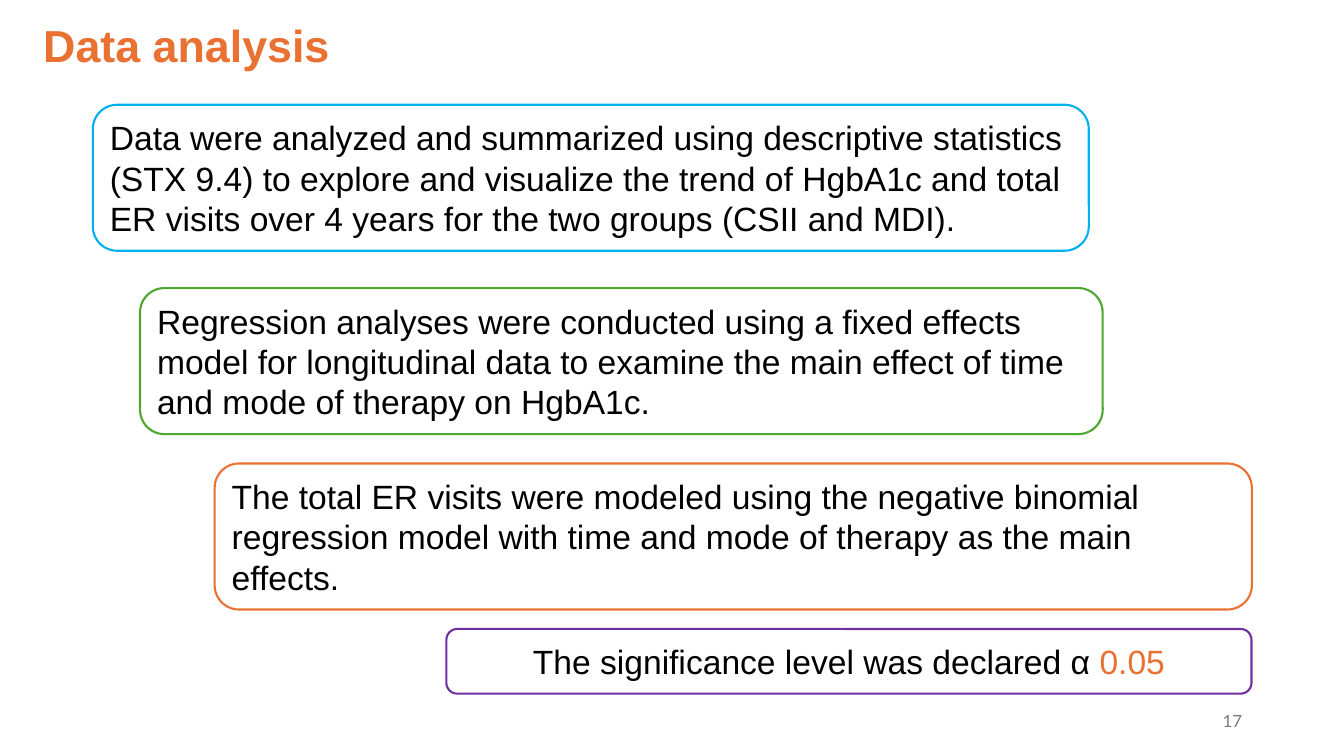
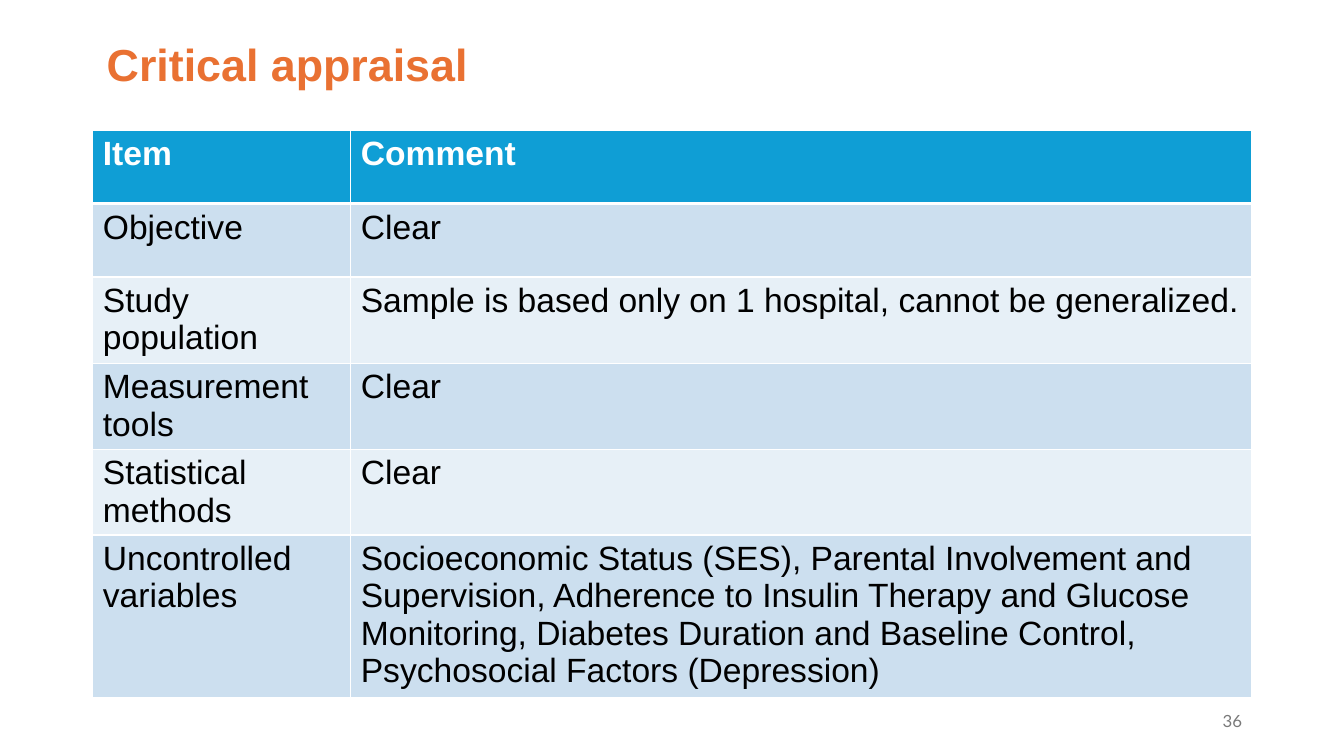
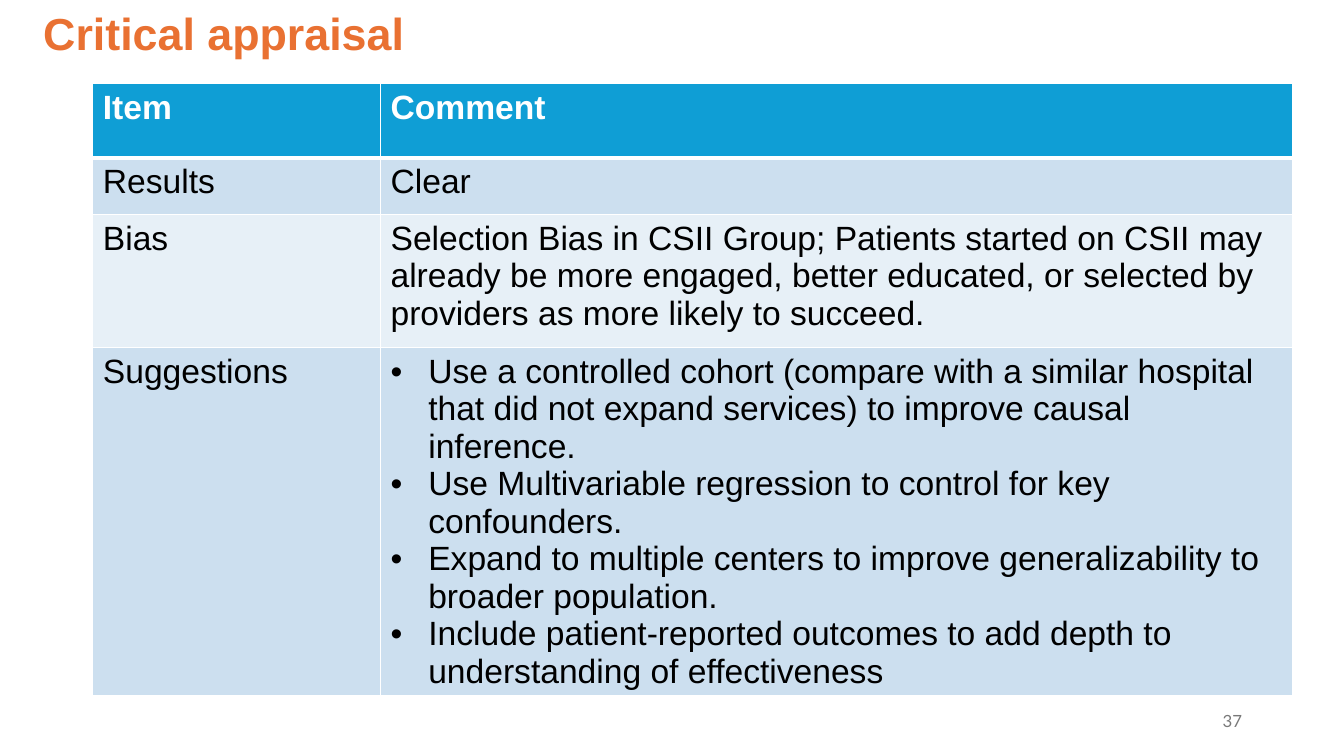
"""Build three slides on the data analysis and critical appraisal of a study."""
from lxml.etree import SubElement
from pptx import Presentation
from pptx.dml.color import RGBColor
from pptx.enum.shapes import MSO_SHAPE
from pptx.enum.text import MSO_ANCHOR, PP_ALIGN
from pptx.oxml.ns import qn
from pptx.util import Cm, Pt

BLACK = RGBColor(0x00, 0x00, 0x00)
WHITE = RGBColor(0xFF, 0xFF, 0xFF)
GREY = RGBColor(0x79, 0x79, 0x79)
ORANGE = RGBColor(0xE9, 0x71, 0x32)
SKY = RGBColor(0x00, 0xB0, 0xF0)
GREEN = RGBColor(0x4E, 0xA7, 0x2E)
PURPLE = RGBColor(0x70, 0x30, 0xA0)
HEADER_BLUE = RGBColor(0x0F, 0x9E, 0xD5)
BANDS = [RGBColor(0xE7, 0xF0, 0xF7), RGBColor(0xCC, 0xDF, 0xEF)]


def write(frame, text, size=24, color=BLACK, bold=False, font="Arial",
          align=PP_ALIGN.LEFT, spacing=1.0, anchor=MSO_ANCHOR.MIDDLE,
          accent="", bullet=False):
    frame.word_wrap = True
    frame.vertical_anchor = anchor
    for index, line in enumerate(text.split("\n")):
        paragraph = frame.add_paragraph() if index else frame.paragraphs[0]
        paragraph.alignment = align
        paragraph.line_spacing = spacing
        if bullet:
            properties = paragraph._p.get_or_add_pPr()
            properties.set("marL", str(Cm(0.95)))
            properties.set("indent", str(-Cm(0.95)))
            SubElement(properties, qn("a:buFont"), typeface="Arial")
            SubElement(properties, qn("a:buChar"), char="•")
        for words, shade in [(line, color), (accent, ORANGE)]:
            if words:
                run = paragraph.add_run()
                run.text = words
                run.font.size = Pt(size)
                run.font.name = font
                run.font.bold = bold
                run.font.color.rgb = shade


def start_slide(title, title_box):
    slide = deck.slides.add_slide(deck.slide_layouts[6])
    heading = slide.shapes.add_textbox(*map(Cm, title_box))
    write(heading.text_frame, title, size=32, color=ORANGE, bold=True, spacing=0.9)
    return slide


deck = Presentation()
deck.slide_width = Cm(33.87)
deck.slide_height = Cm(19.05)

analysis = start_slide("Data analysis", (0.84, 0.3, 9.17, 1.83))
steps = [
    ((2.34, 2.64, 25.1, 3.68), SKY, PP_ALIGN.LEFT,
     "Data were analyzed and summarized using descriptive statistics (STX 9.4) to "
     "explore and visualize the trend of HgbA1c and total ER visits over 4 years "
     "for the two groups (CSII and MDI).", ""),
    ((3.53, 7.26, 24.26, 3.68), GREEN, PP_ALIGN.LEFT,
     "Regression analyses were conducted using a ﬁxed effects model for "
     "longitudinal data to examine the main effect of time and mode of therapy "
     "on HgbA1c.", ""),
    ((5.41, 11.68, 26.14, 3.68), ORANGE, PP_ALIGN.LEFT,
     "The total ER visits were modeled using the negative binomial regression "
     "model with time and mode of therapy as the main effects.", ""),
    ((11.25, 15.85, 20.29, 1.63), PURPLE, PP_ALIGN.CENTER,
     "The signiﬁcance level was declared α ", "0.05"),
]
for box, outline, align, text, accent in steps:
    step = analysis.shapes.add_shape(MSO_SHAPE.ROUNDED_RECTANGLE, *map(Cm, box))
    step.shadow.inherit = False
    step.fill.solid()
    step.fill.fore_color.rgb = WHITE
    step.line.color.rgb = outline
    step.line.width = Pt(1.5)
    write(step.text_frame, text, align=align, accent=accent)

appraisals = [
    ((2.44, 0.97, 9.96, 1.45), 3.28, (6.5, 22.71), [
        (1.85, "Item", "Comment"),
        (1.85, "Objective", "Clear"),
        (2.18, "Study population",
         "Sample is based only on 1 hospital, cannot be generalized."),
        (2.16, "Measurement tools", "Clear"),
        (2.16, "Statistical methods", "Clear"),
        (4.11, "Uncontrolled variables",
         "Socioeconomic Status (SES), Parental Involvement and Supervision, "
         "Adherence to Insulin Therapy and Glucose Monitoring, Diabetes Duration "
         "and Baseline Control, Psychosocial Factors (Depression)"),
    ]),
    ((0.84, 0.18, 10.11, 1.45), 2.11, (7.25, 22.98), [
        (1.88, "Item", "Comment"),
        (1.42, "Results", "Clear"),
        (3.35, "Bias",
         "Selection Bias in CSII Group; Patients started on CSII may already be "
         "more engaged, better educated, or selected by providers as more likely "
         "to succeed."),
        (8.74, "Suggestions",
         "Use a controlled cohort (compare with a similar hospital that did not "
         "expand services) to improve causal inference.\n"
         "Use Multivariable regression to control for key confounders.\n"
         "Expand to multiple centers to improve generalizability to broader "
         "population.\n"
         "Include patient-reported outcomes to add depth to understanding of "
         "effectiveness"),
    ]),
]
for title_box, top, widths, rows in appraisals:
    slide = start_slide("Critical appraisal", title_box)
    table = slide.shapes.add_table(
        len(rows), len(widths), Cm(2.34), Cm(top), Cm(sum(widths)),
        Cm(sum(height for height, *_ in rows))).table
    for column, width in zip(table.columns, widths):
        column.width = Cm(width)
    for row_index, (height, *texts) in enumerate(rows):
        table.rows[row_index].height = Cm(height)
        header = row_index == 0
        for column_index, text in enumerate(texts):
            cell = table.cell(row_index, column_index)
            borders = {"L": 1, "R": 1, "T": 3 if row_index == 1 else 1,
                       "B": 3 if header else 1}
            for side, weight in borders.items():
                border = SubElement(cell._tc.get_or_add_tcPr(), qn(f"a:ln{side}"),
                                    w=str(Pt(weight)))
                paint = SubElement(border, qn("a:solidFill"))
                SubElement(paint, qn("a:srgbClr"), val=str(WHITE))
            cell.fill.solid()
            cell.fill.fore_color.rgb = HEADER_BLUE if header else BANDS[row_index % 2]
            write(cell.text_frame, text, color=WHITE if header else BLACK,
                  bold=header, spacing=Pt(26.8), anchor=MSO_ANCHOR.TOP,
                  bullet="\n" in text)

for slide, page_number in zip(deck.slides, ("17", "36", "37")):
    footer = slide.shapes.add_textbox(Cm(23.93), Cm(17.65), Cm(7.62), Cm(1.02))
    write(footer.text_frame, page_number, size=12, color=GREY, font="Lato",
          align=PP_ALIGN.RIGHT)

deck.save("out.pptx")
